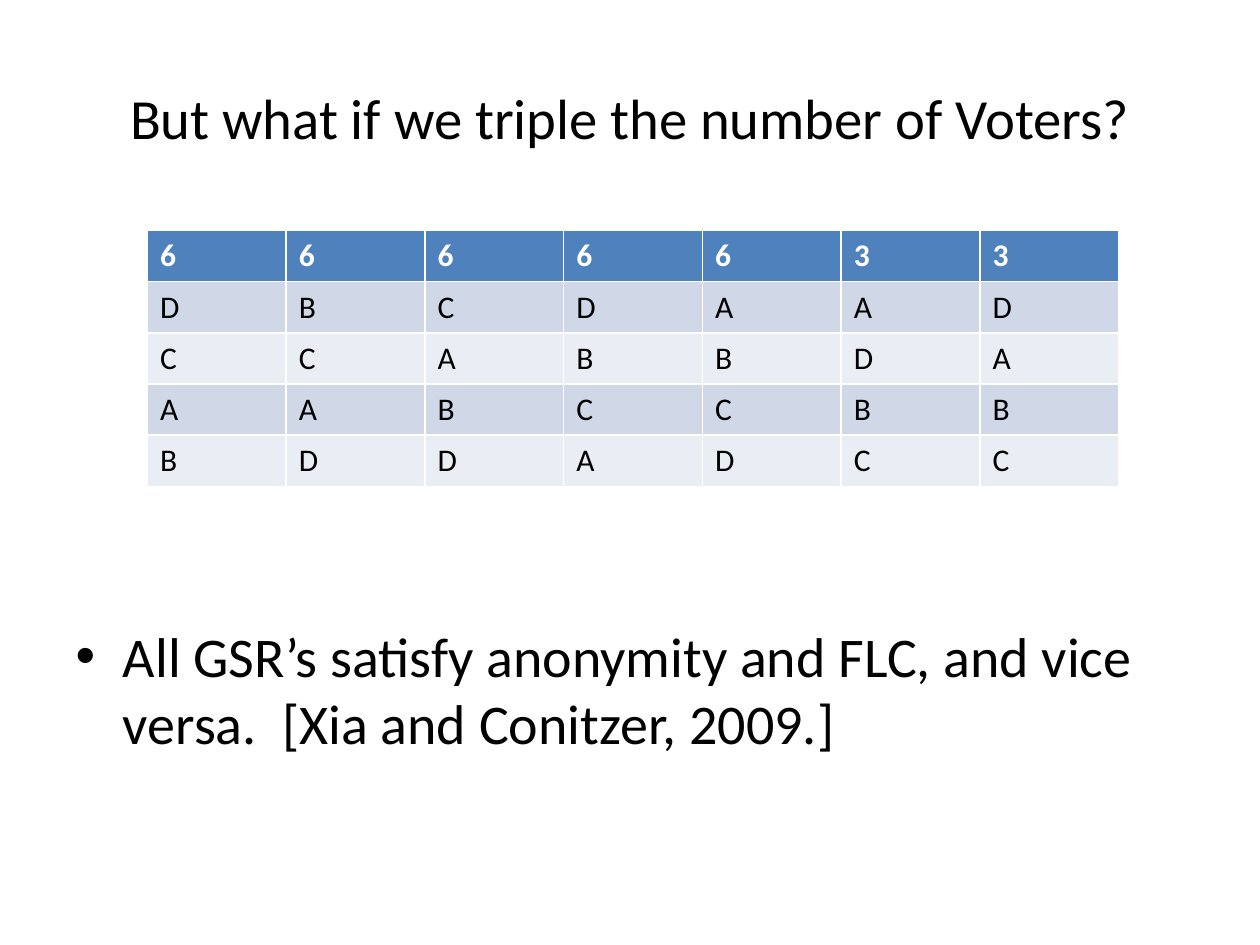
"""Build a slide with a table of tripled voter rankings and a note on GSRs."""
from dataclasses import dataclass

from pptx import Presentation
from pptx import util as u
from pptx.dml import color
from pptx.enum import text


@dataclass(frozen=True)
class Theme:
    font: str = "Calibri"
    ink: str = "000000"
    paper: str = "FFFFFF"
    header: str = "4F81BD"
    bands: tuple = ("D0D8E8", "E9EDF4")
    title_size: float = 32.4
    body_size: float = 32
    cell_size: float = 18


THEME = Theme()
COUNTS = "6666633"
RANKINGS = ("DBCDAAD", "CCABBDA", "AABCCBB", "BDDADCC")


def write(tf, content, size, ink=THEME.ink, bold=False, align=None):
    p = tf.paragraphs[0]
    p.alignment = align
    r = p.add_run()
    r.text = content
    r.font.name = THEME.font
    r.font.size = u.Pt(size)
    r.font.bold = bold
    r.font.color.rgb = color.RGBColor.from_string(ink)
    return p


def place(sp, left, top, width, height):
    sp.left, sp.top = u.Inches(left), u.Inches(top)
    sp.width, sp.height = u.Inches(width), u.Inches(height)
    sp.text_frame.auto_size = text.MSO_AUTO_SIZE.NONE
    return sp.text_frame


def add_title(s, content):
    tf = place(s.shapes.title, 0.5, 0.3, 9, 1.25)
    tf.vertical_anchor = text.MSO_ANCHOR.MIDDLE
    write(tf, content, THEME.title_size, align=text.PP_ALIGN.CENTER)


def add_bullet(s, content):
    tf = place(s.placeholders[1], 0.5, 1.75, 9, 4.95)
    tf.margin_top = u.Inches(3.18)
    p = write(tf, content, THEME.body_size)
    p.space_before = u.Pt(0)


def add_rankings(s, counts, rankings):
    rows = (counts, *rankings)
    table = s.shapes.add_table(
        len(rows), len(counts),
        u.Inches(1.17), u.Inches(1.83), u.Inches(7.71), u.Inches(2.03),
    ).table
    for i, row in enumerate(rows):
        is_header = i == 0
        fill = THEME.header if is_header else THEME.bands[(i - 1) % 2]
        ink = THEME.paper if is_header else THEME.ink
        for j, value in enumerate(row):
            cell = table.cell(i, j)
            cell.fill.solid()
            cell.fill.fore_color.rgb = color.RGBColor.from_string(fill)
            write(cell.text_frame, value, THEME.cell_size, ink, bold=is_header)


def main():
    prs = Presentation()
    prs.slide_width, prs.slide_height = u.Inches(10), u.Inches(7.5)
    s = prs.slides.add_slide(prs.slide_layouts[1])
    add_title(s, "But what if we triple the number of Voters?")
    add_bullet(s, "All GSR’s satisfy anonymity and FLC, and vice versa.  "
                  "[Xia and Conitzer, 2009.]")
    add_rankings(s, COUNTS, RANKINGS)
    prs.save("out.pptx")


if __name__ == "__main__":
    main()
